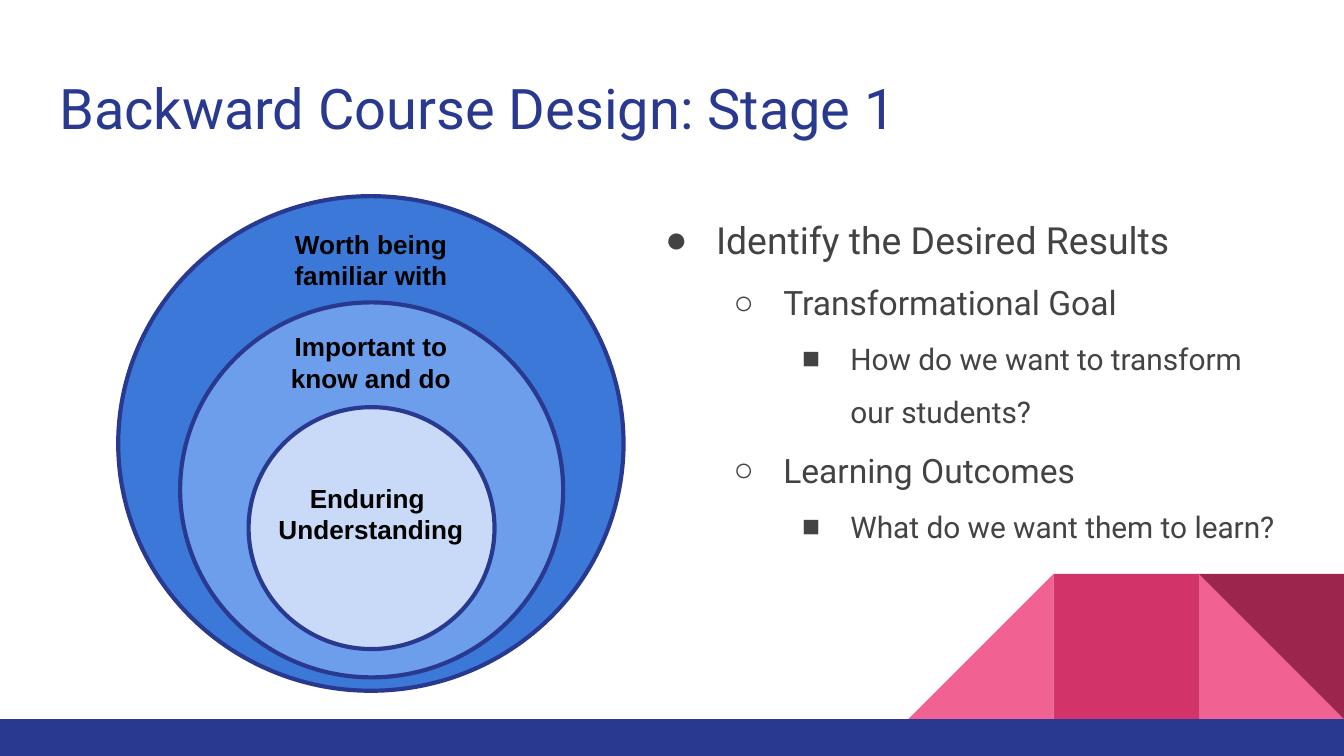
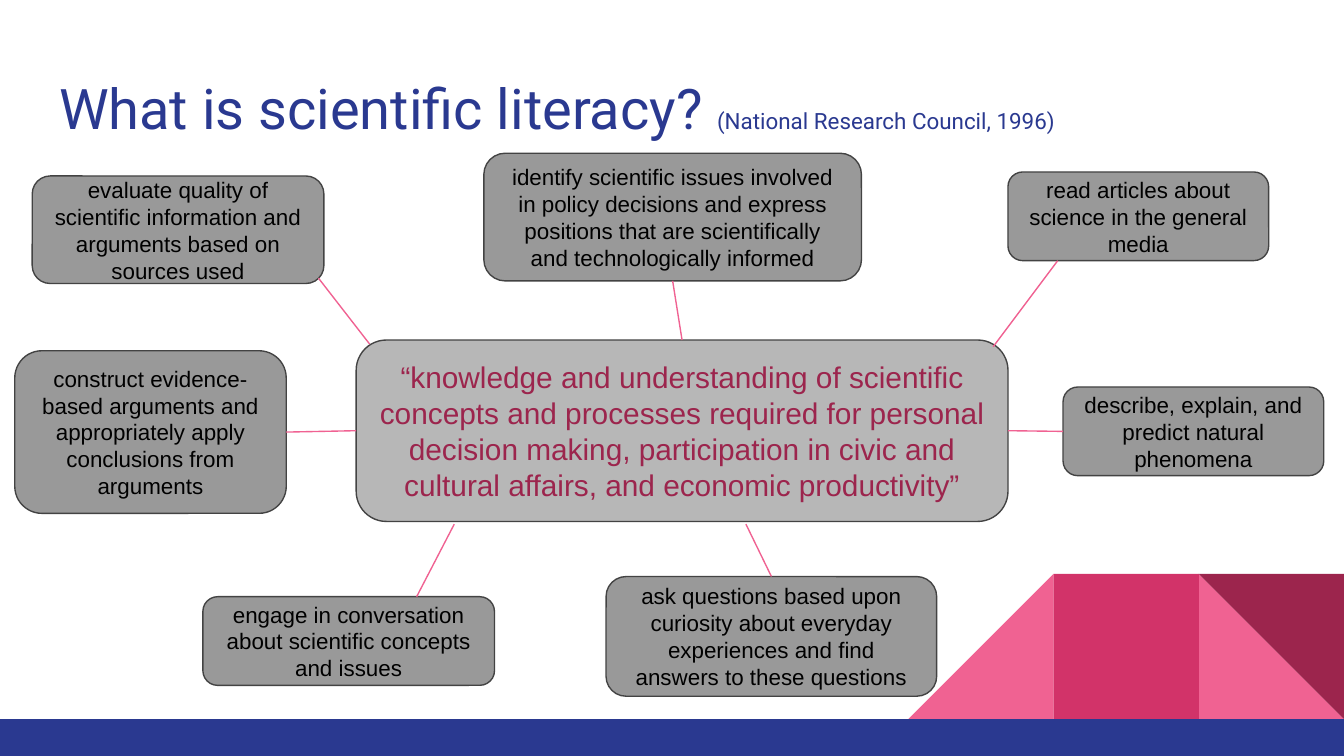
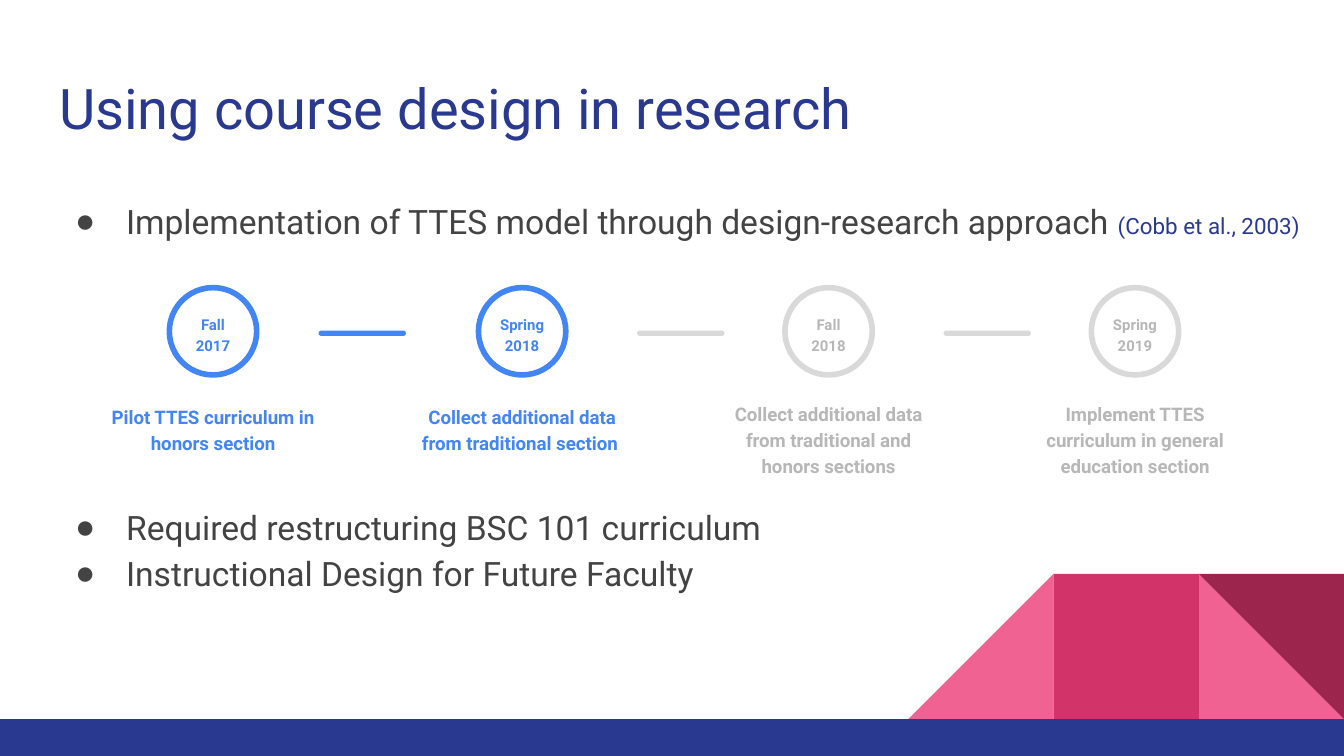
from lxml import etree
from pptx import Presentation
from pptx import util as u
from pptx.dml.color import RGBColor
from pptx.enum import shapes, text
from pptx.oxml.ns import qn

px = 9144
hue = RGBColor.from_string
kinds = shapes.MSO_SHAPE
NAVY, CHARCOAL, BLACK = "2A3990", "434343", "000000"
PINK, ROSE, WINE = "F06292", "D23369", "9C254D"
BLUE, PALE, SILVER, GREY = "4285F4", "D9D9D9", "B7B7B7", "999999"
CENTER = text.PP_ALIGN.CENTER
TOP, MIDDLE, BOTTOM = text.MSO_ANCHOR.TOP, text.MSO_ANCHOR.MIDDLE, text.MSO_ANCHOR.BOTTOM


def add_block(tree, kind, place, fill=None, line=None, weight=0.75):
    shape = tree.add_shape(kind, *[n * px for n in place])
    shape.shadow.inherit = False
    if fill:
        shape.fill.solid()
        shape.fill.fore_color.rgb = hue(fill)
    else:
        shape.fill.background()
    if line:
        shape.line.color.rgb = hue(line)
        shape.line.width = u.Pt(weight)
    else:
        shape.line.fill.background()
    return shape


def write(box, words, size, color, font="Arial", bold=False, align=text.PP_ALIGN.LEFT,
          anchor=TOP, spacing=None):
    frame = box.text_frame
    frame.text = words
    frame.word_wrap = True
    frame.auto_size = text.MSO_AUTO_SIZE.NONE
    frame.vertical_anchor = anchor
    frame.margin_left = frame.margin_right = frame.margin_top = frame.margin_bottom = 10 * px
    for para in frame.paragraphs:
        para.alignment = align
        para.line_spacing = spacing
        for span in para.runs:
            span.font.name = font
            span.font.size = u.Pt(size)
            span.font.bold = bold
            span.font.color.rgb = hue(color)
    return frame


deck = Presentation()
deck.slide_width = 1000 * px
deck.slide_height = deck.slide_width * 9 // 16
layout = deck.slide_layouts[5]

pages = []
for title in ["Backward Course Design: Stage 1", "What is scientific literacy? ",
              "Using course design in research"]:
    page = deck.slides.add_slide(layout)
    box = page.shapes.title
    box.left, box.top, box.width, box.height = 34 * px, 45 * px, 932 * px, 66 * px
    write(box, title, 30, NAVY, "Roboto")
    pages.append(page)
goals, literacy, research = pages

band = goals.shapes.add_group_shape()
for kind, place, fill, flip, turn in [
    (kinds.RIGHT_TRIANGLE, (892, 427, 108, 108), PINK, False, 0),
    (kinds.RIGHT_TRIANGLE, (676, 427, 108, 108), PINK, True, 0),
    (kinds.RECTANGLE, (784, 427, 108, 108), ROSE, False, 0),
    (kinds.RIGHT_TRIANGLE, (892, 427, 108, 108), WINE, False, 180),
    (kinds.RECTANGLE, (0, 535, 1000, 28), NAVY, False, 0),
]:
    shape = add_block(band.shapes, kind, place, fill)
    shape.rotation = turn
    if flip:
        shape._element.spPr.get_or_add_xfrm().set("flipH", "1")
layout.shapes._spTree.insert(2, band._element)

outlines = [
    (goals, (473, 135, 493, 365), 1.5, [
        (0, 20, 0, "Identify the Desired Results"),
        (1, 18, 0, "Transformational Goal"),
        (2, 16, 0, "How do we want to transform our students?"),
        (1, 18, 0, "Learning Outcomes"),
        (2, 16, 0, "What do we want them to learn?"),
    ]),
    (research, (34, 135, 953, 365), 1.15, [
        (0, 18, 0, "Implementation of TTES model through design-research approach "),
        (0, 18, 139, "Required restructuring BSC 101 curriculum"),
        (0, 18, 0, "Instructional Design for Future Faculty"),
    ]),
]
for page, place, spacing, items in outlines:
    box = page.shapes.add_textbox(*[n * px for n in place])
    outline = write(box, "\n".join(item[3] for item in items), 18, CHARCOAL, "Roboto",
                    spacing=spacing)
    for para, (level, size, before, words) in zip(outline.paragraphs, items):
        para.level = level
        if before:
            para.space_before = u.Pt(before)
        props = para._p.get_or_add_pPr()
        props.set("marL", str(50 * (level + 1) * px))
        props.set("indent", str((level - 38) * px))
        tint = etree.SubElement(props, qn("a:buClr"))
        etree.SubElement(tint, qn("a:srgbClr"), val=CHARCOAL)
        etree.SubElement(props, qn("a:buFont"), typeface="Arial")
        etree.SubElement(props, qn("a:buChar"), char="●○■"[level])
        para.runs[0].font.size = u.Pt(size)

for para, citation in [
    (literacy.shapes.title.text_frame.paragraphs[0], "(National Research Council, 1996)"),
    (outline.paragraphs[0], "(Cobb et al., 2003)"),
]:
    span = para.add_run()
    span.text = citation
    span.font.name = "Roboto"
    span.font.size = u.Pt(12)
    span.font.color.rgb = hue(NAVY)

for place, fill, label_top, words in [
    ((88, 146, 376, 368), "3C78D8", 160, "Worth being familiar with"),
    ((134, 225, 285, 279), "6D9EEB", 236, "Important to know and do"),
    ((185, 303, 183, 180), "C9DAF8", 349, "Enduring \vUnderstanding"),
]:
    add_block(goals.shapes, kinds.OVAL, place, fill, NAVY, 2.25)
    label = goals.shapes.add_textbox(195 * px, label_top * px, 162 * px, 66 * px)
    write(label, words, 14, BLACK, bold=True, align=CENTER)

core = add_block(literacy.shapes, kinds.FLOWCHART_ALTERNATE_PROCESS, (265, 253, 485, 135),
                 SILVER, CHARCOAL)
write(core, "“knowledge and understanding of scientific concepts and processes required for "
      "personal decision making, participation in civic and cultural affairs, and economic "
      "productivity”", 16, WINE, align=CENTER, anchor=MIDDLE)

for place, words, start, end, side, core_side in [
    ((451, 429, 246, 89), "ask questions based upon curiosity about everyday experiences and "
     "find answers to these questions", (574, 429), (555, 390), 0, None),
    ((791, 288, 194, 66), "describe, explain, and predict natural phenomena",
     (791, 321), (750, 321), 1, 3),
    ((750, 128, 194, 66), "read articles about science in the general media",
     (787, 194), (739, 258), None, None),
    ((151, 444, 217, 66), "engage in conversation about scientific concepts and issues",
     (310, 444), (338, 390), None, None),
    ((360, 114, 281, 95), "identify scientific issues involved in policy decisions and express "
     "positions that are scientifically and technologically informed",
     (500, 209), (507, 253), 2, 0),
    ((24, 131, 217, 80), "evaluate quality of scientific information and arguments based on "
     "sources used", (237, 207), (275, 256), None, None),
    ((11, 261, 202, 121), "construct evidence-based arguments and appropriately apply "
     "conclusions from arguments", (213, 322), (265, 321), 3, 1),
]:
    skill = add_block(literacy.shapes, kinds.FLOWCHART_ALTERNATE_PROCESS, place, GREY, CHARCOAL)
    write(skill, words, 12, BLACK, align=CENTER, anchor=MIDDLE)
    link = literacy.shapes.add_connector(shapes.MSO_CONNECTOR.STRAIGHT,
                                         *[n * px for n in start + end])
    link.line.color.rgb = hue(PINK)
    link.line.width = u.Pt(0.75)
    etree.SubElement(link._element.spPr, qn("a:effectLst"))
    if side is not None:
        link.begin_connect(skill, side)
    if core_side is not None:
        link.end_connect(core, core_side)

for left, term, words, caption_top, ring, ink in [
    (126, "Fall 2017", "Pilot TTES curriculum in honors section", 299, BLUE, BLUE),
    (356, "Spring 2018", "Collect additional data from traditional section ", 299, BLUE, BLUE),
    (584, "Fall 2018", "Collect additional data from traditional and honors sections", 316,
     PALE, SILVER),
    (812, "Spring 2019", "Implement TTES curriculum in general education section", 316,
     PALE, SILVER),
]:
    add_block(research.shapes, kinds.OVAL, (left, 214, 65, 65), None, ring, 3)
    date = research.shapes.add_textbox((left + 4) * px, 223 * px, 57 * px, 35 * px)
    write(date, term, 8, ink, "Roboto", True, CENTER, spacing=1.15)
    caption = research.shapes.add_textbox((left - 61) * px, caption_top * px, 187 * px, 49 * px)
    write(caption, words, 10, ink, "Roboto", True, CENTER, BOTTOM, 1.15)

for left, fill in [(237, BLUE), (474, PALE), (702, PALE)]:
    bar = add_block(research.shapes, kinds.ROUNDED_RECTANGLE, (left, 246, 65, 4), fill)
    bar.adjustments[0] = 0.5

deck.save("out.pptx")
